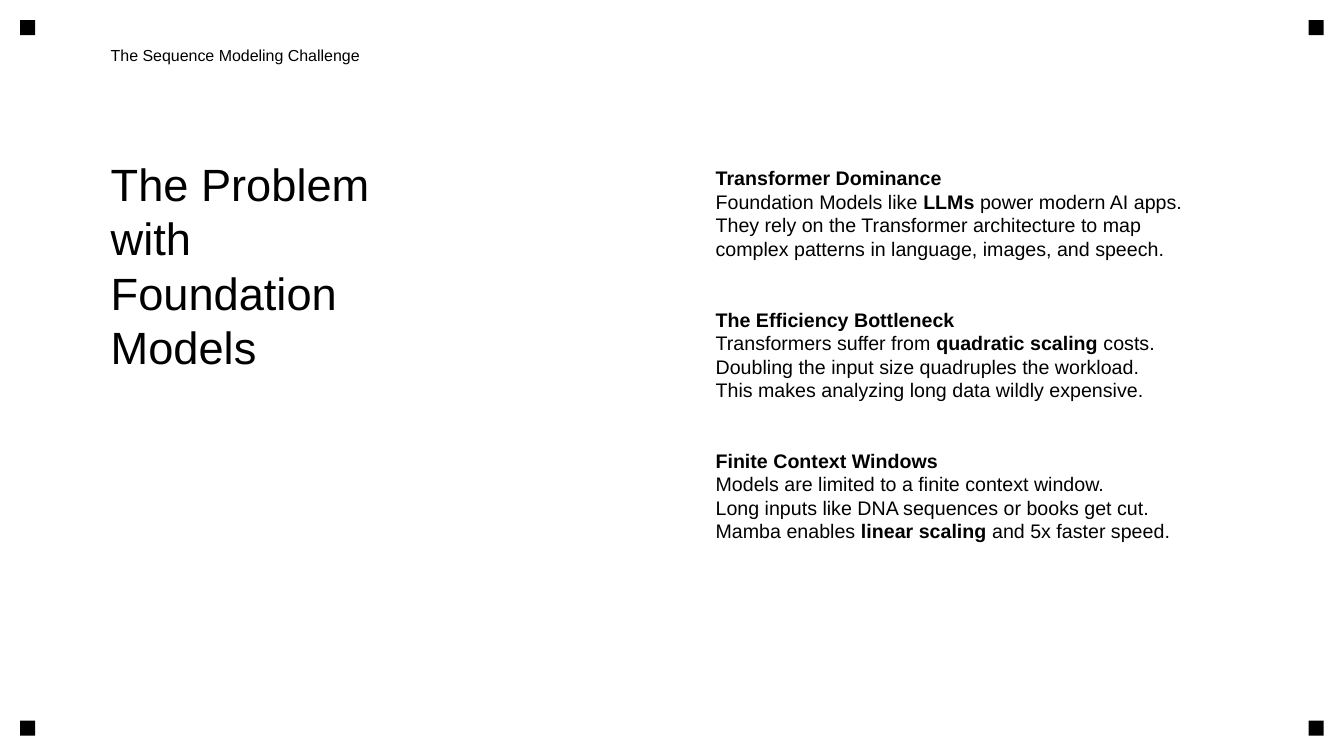
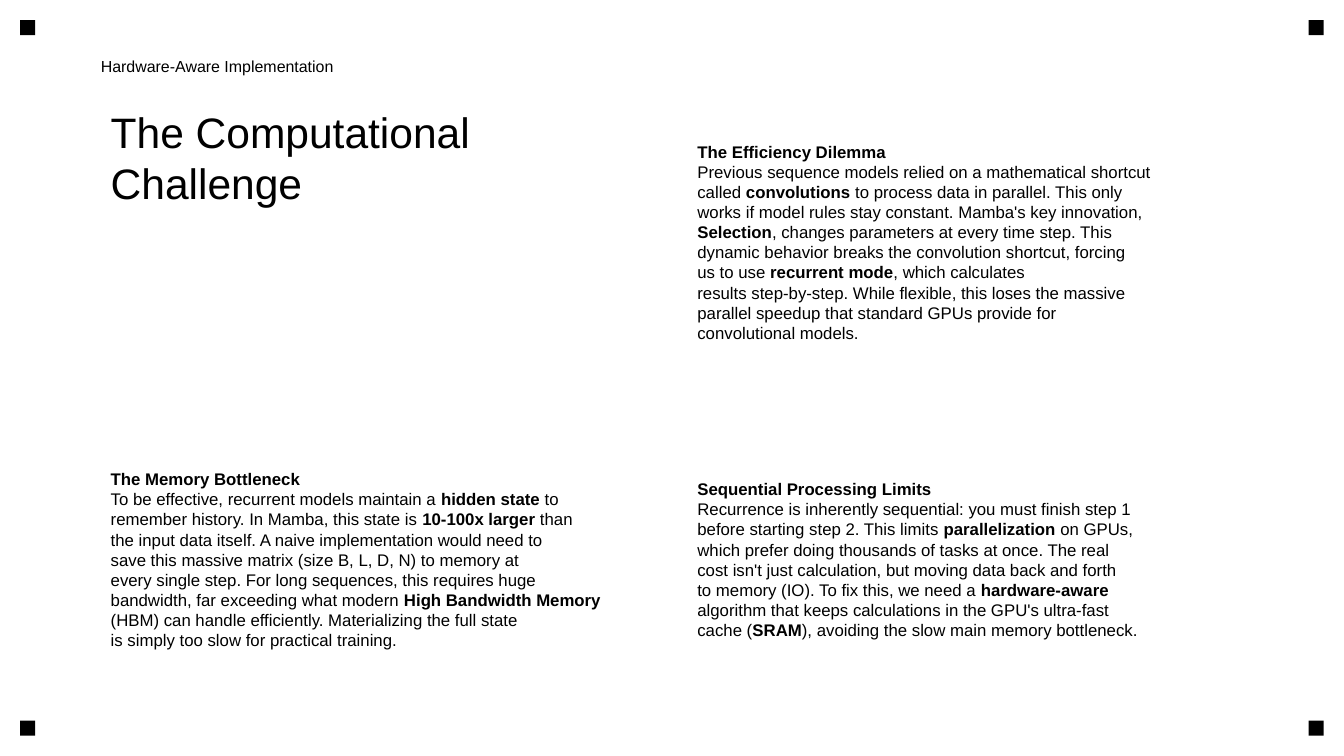
from pptx import Presentation
from pptx import util as u
from pptx.dml.color import RGBColor
from pptx.enum import shapes, text

INK = {"paper": "FFFFFF", "text": "000000", "mark": "000000"}
FACE = "Arial"
WIDE, HIGH = 33.86, 19.05
LEFT = 2.54
INSET = (0.25, 0.13, 0.13, 0.25)  # left, top, right, bottom
MARK, EDGE = 0.38, 0.51
HEAD = (LEFT, 1.02, 15.24, 1.27)

# Lines between double asterisks are bold
ISSUES = [
    """**Transformer Dominance**
Foundation Models like **LLMs** power modern AI apps.
They rely on the Transformer architecture to map
complex patterns in language, images, and speech.""",
    """**The Efficiency Bottleneck**
Transformers suffer from **quadratic scaling** costs.
Doubling the input size quadruples the workload.
This makes analyzing long data wildly expensive.""",
    """**Finite Context Windows**
Models are limited to a finite context window.
Long inputs like DNA sequences or books get cut.
Mamba enables **linear scaling** and 5x faster speed.""",
]

DILEMMA = """**The Efficiency Dilemma**
Previous sequence models relied on a mathematical shortcut
called **convolutions** to process data in parallel. This only
works if model rules stay constant. Mamba's key innovation,
**Selection**, changes parameters at every time step. This
dynamic behavior breaks the convolution shortcut, forcing
us to use **recurrent mode**, which calculates
results step-by-step. While flexible, this loses the massive
parallel speedup that standard GPUs provide for
convolutional models."""

MEMORY = """**The Memory Bottleneck**
To be effective, recurrent models maintain a **hidden state** to
remember history. In Mamba, this state is **10-100x larger** than
the input data itself. A naive implementation would need to
save this massive matrix (size B, L, D, N) to memory at
every single step. For long sequences, this requires huge
bandwidth, far exceeding what modern **High Bandwidth Memory**
(HBM) can handle efficiently. Materializing the full state
is simply too slow for practical training."""

LIMITS = """**Sequential Processing Limits**
Recurrence is inherently sequential: you must finish step 1
before starting step 2. This limits **parallelization** on GPUs,
which prefer doing thousands of tasks at once. The real
cost isn't just calculation, but moving data back and forth
to memory (IO). To fix this, we need a **hardware-aware**
algorithm that keeps calculations in the GPU's ultra-fast
cache (**SRAM**), avoiding the slow main memory bottleneck."""


def color(name):
    return RGBColor.from_string(INK[name])


def write(slide, box, words, size=12, middle=False, inset=INSET):
    """Place text in a box, one paragraph per line."""
    frame = slide.shapes.add_textbox(*map(u.Cm, box)).text_frame
    frame.word_wrap = True
    frame.vertical_anchor = text.MSO_ANCHOR.MIDDLE if middle else text.MSO_ANCHOR.TOP
    (frame.margin_left, frame.margin_top,
     frame.margin_right, frame.margin_bottom) = map(u.Cm, inset)
    for i, line in enumerate(words.split("\n")):
        para = frame.paragraphs[0] if i == 0 else frame.add_paragraph()
        para.line_spacing = u.Pt(round(size * 1.2, 1))
        for j, part in enumerate(line.split("**")):
            if part:
                run = para.add_run()
                run.text = part
                font = run.font
                font.name, font.size, font.bold = FACE, u.Pt(size), j % 2 == 1
                font.color.rgb = color("text")


def corners(slide):
    """Put a square mark in each corner."""
    for y in (EDGE, HIGH - EDGE - MARK):
        for x in (EDGE, WIDE - EDGE - MARK):
            mark = slide.shapes.add_shape(
                shapes.MSO_SHAPE.RECTANGLE, *map(u.Cm, (x, y, MARK, MARK)))
            mark.shadow.inherit = False
            mark.fill.solid()
            mark.fill.fore_color.rgb = color("mark")
            mark.line.fill.background()


def start(deck, head, **form):
    """Add a slide with its background, marks and header."""
    slide = deck.slides.add_slide(deck.slide_layouts[6])
    slide.background.fill.solid()
    slide.background.fill.fore_color.rgb = color("paper")
    corners(slide)
    write(slide, HEAD, head, size=11.4, **form)
    return slide


def stack(slide, box, items, gap):
    """Set equal blocks of text one below the other."""
    x, y, w, h = box
    tall = (h - gap * (len(items) - 1)) / len(items)
    for i, item in enumerate(items):
        write(slide, (x, y + i * (tall + gap), w, tall), item, size=14)


def grid(slide, box, title, cells, gap):
    """Set a title and three blocks in a two by two grid."""
    x, y, w, h = box
    wide, tall = (w - gap) / 2, (h - gap) / 2
    for i, item in enumerate([title] + cells):
        row, col = divmod(i, 2)
        cell = (x + col * (wide + gap), y + row * (tall + gap), wide, tall)
        write(slide, cell, item, size=12 if i else 30.4, middle=i > 0)


def problem(deck):
    slide = start(deck, "The Sequence Modeling Challenge")
    write(slide, (LEFT, 3.81, 12.7, 7.62),
          "The Problem\nwith\nFoundation\nModels", size=32.3)
    stack(slide, (17.78, 4.06, 12.7, 10.16), ISSUES, gap=0.51)


def challenge(deck):
    slide = start(deck, "Hardware-Aware Implementation",
                  middle=True, inset=(0, 0, 0, 0))
    grid(slide, (LEFT, 2.54, 28.8, 15.24), "The Computational\nChallenge",
         [DILEMMA, MEMORY, LIMITS], gap=0.76)


def main():
    deck = Presentation()
    deck.slide_width, deck.slide_height = u.Cm(WIDE), u.Cm(HIGH)
    problem(deck)
    challenge(deck)
    deck.save("out.pptx")


if __name__ == "__main__":
    main()
